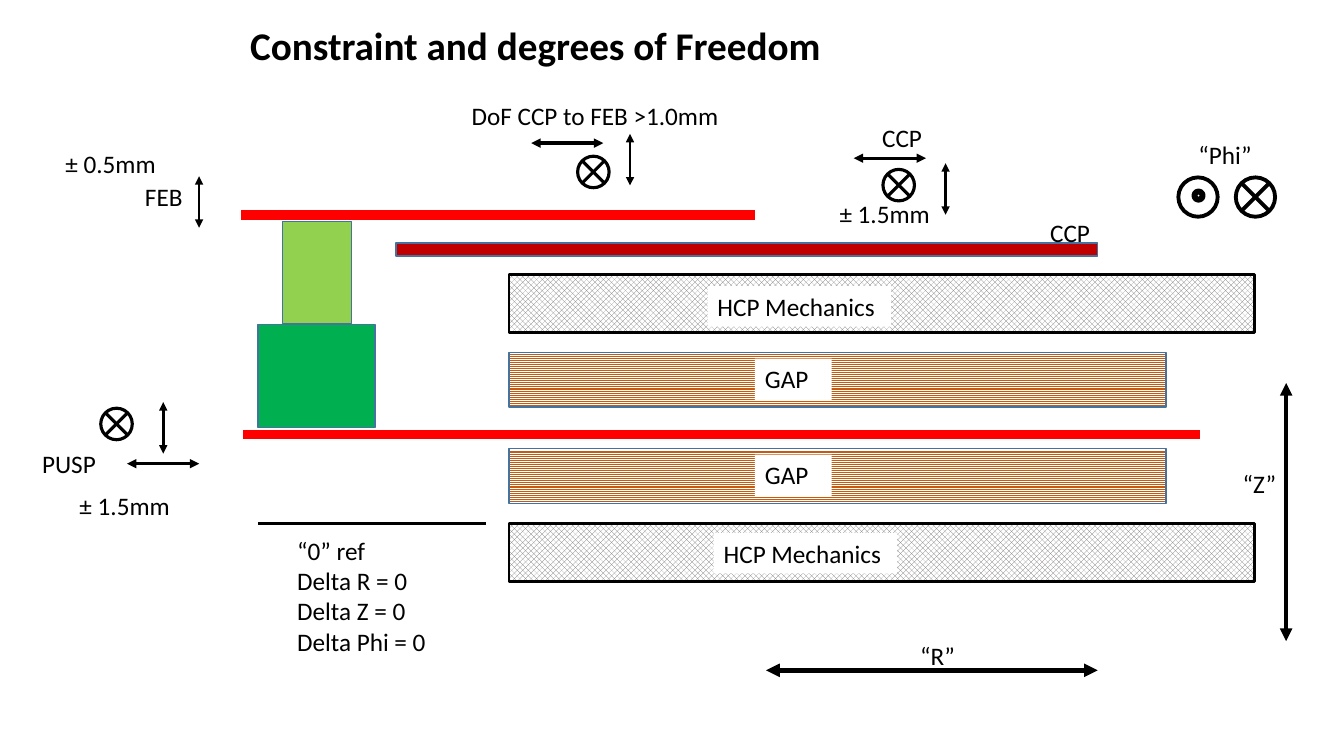
from pptx import Presentation
from pptx.dml.color import RGBColor
from pptx.enum.dml import MSO_PATTERN_TYPE as PATTERN
from pptx.enum.shapes import MSO_CONNECTOR as CONN, MSO_SHAPE as SHAPE
from pptx.enum.text import MSO_ANCHOR, MSO_AUTO_SIZE, PP_ALIGN
from pptx.oxml.ns import qn
from pptx.util import Pt
from lxml.etree import SubElement

COLORS = {
    "black": "000000", "white": "FFFFFF", "board": "FF0000", "ccp": "C00000",
    "light green": "92D050", "green": "00B050", "outline": "43739E",
    "mechanics": "767171", "gap": "C55A11",
}
BODY = {"name": "Calibri", "size": Pt(18), "bold": False}
TITLE = {"name": "Calibri", "size": Pt(28), "bold": True}
FRAME = {"word_wrap": True, "auto_size": MSO_AUTO_SIZE.NONE,
         "vertical_anchor": MSO_ANCHOR.TOP}


def rgb(name):
    return RGBColor.from_string(COLORS[name])


def set_format(obj, fmt):
    for key, value in fmt.items():
        setattr(obj, key, value)


class Diagram:
    def __init__(self, slide):
        self.slide = slide
        self.shapes = slide.shapes

    def fill_text(self, sp, lines, font):
        tf = sp.text_frame
        set_format(tf, FRAME)
        for i, line in enumerate(lines):
            p = tf.paragraphs[0] if i == 0 else tf.add_paragraph()
            p.alignment = PP_ALIGN.LEFT
            r = p.add_run()
            r.text = line
            set_format(r.font, font)
            r.font.color.rgb = rgb("black")

    def title(self, text, x, y, w, h):
        sp = self.shapes.title
        set_format(sp, {"left": Pt(x), "top": Pt(y), "width": Pt(w), "height": Pt(h)})
        self.fill_text(sp, [text], TITLE)

    def label(self, text, x, y, w, h=28.8, fill=None):
        sp = self.shapes.add_textbox(Pt(x), Pt(y), Pt(w), Pt(h))
        if fill:
            sp.fill.solid()
            sp.fill.fore_color.rgb = rgb(fill)
        self.fill_text(sp, text.split("\n"), BODY)

    def shape(self, kind, x, y, w, h, fill=None, pattern=None,
              line="outline", weight=1):
        sp = self.shapes.add_shape(kind, Pt(x), Pt(y), Pt(w), Pt(h))
        sp.shadow.inherit = False
        if pattern:
            sp.fill.patterned()
            sp.fill.pattern = pattern
            sp.fill.fore_color.rgb = rgb(fill)
            sp.fill.back_color.rgb = rgb("white")
        elif fill:
            sp.fill.solid()
            sp.fill.fore_color.rgb = rgb(fill)
        else:
            sp.fill.background()
        sp.line.color.rgb = rgb(line)
        sp.line.width = Pt(weight)

    def line(self, x1, y1, x2, y2, weight, color="black", arrows=False):
        c = self.shapes.add_connector(CONN.STRAIGHT, Pt(x1), Pt(y1), Pt(x2), Pt(y2))
        c.line.color.rgb = rgb(color)
        c.line.width = Pt(weight)
        sp_pr = c._element.spPr
        if arrows:
            ln = sp_pr.find(qn("a:ln"))
            for end in ("a:headEnd", "a:tailEnd"):
                SubElement(ln, qn(end), type="triangle")
        SubElement(sp_pr, qn("a:effectLst"))

    def arrow_across(self, x, y, length=51.6, weight=2.25):
        self.line(x, y, x + length, y, weight, arrows=True)

    def arrow_up(self, x, bottom, length=36.8, weight=2):
        self.line(x, bottom, x, bottom - length, weight, arrows=True)

    def ring(self, x, y, size=22.5, weight=2.25, kind=SHAPE.FLOWCHART_SUMMING_JUNCTION):
        self.shape(kind, x, y, size, size, line="black", weight=weight)


def main():
    prs = Presentation()
    prs.slide_width, prs.slide_height = Pt(960), Pt(540)
    s = Diagram(prs.slides.add_slide(prs.slide_layouts[5]))
    s.title("Constraint and degrees of Freedom", 171.4, 11.5, 455, 41)

    # Mechanics and gaps, with their labels
    for y, label_x, label_y in ((195.8, 505.4, 204.5), (373.7, 509.8, 380.9)):
        s.shape(SHAPE.RECTANGLE, 363.6, y, 532.8, 41.8, "mechanics",
                PATTERN.OUTLINED_DIAMOND, "black", 2)
        s.label("HCP Mechanics", label_x, label_y, 131, fill="white")
    for y in (252, 320.6):
        s.shape(SHAPE.RECTANGLE, 363.6, y, 469.4, 38.9, "gap",
                PATTERN.LIGHT_HORIZONTAL)
        s.label("GAP", 539.3, y + 4.2, 54.7, 30.2, "white")

    # Boards and connector blocks
    s.line(173.5, 310.3, 856.8, 310.3, 6, "board")
    s.line(172.1, 153.4, 539.3, 153.4, 7.25, "board")
    for x, y, w, h, fill in (
        (283, 173.5, 501.1, 9.4, "ccp"),
        (201.6, 158.4, 49.7, 72.7, "light green"),
        (184.3, 231.8, 83.5, 73.4, "green"),
    ):
        s.shape(SHAPE.RECTANGLE, x, y, w, h, fill)

    # Freedom symbols: PUSP, CCP to FEB, CCP, and FEB
    for x, bottom in ((116.6, 324), (450, 132.5), (675.4, 153.4), (142.2, 162.7)):
        s.arrow_up(x, bottom)
    for x, y in ((90.7, 331.2), (379.4, 102.2), (609.8, 113)):
        s.arrow_across(x, y)
    for x, y in ((72, 291.6), (412.6, 111.6), (630.7, 121)):
        s.ring(x, y)

    # Axes: R, Z and Phi
    s.arrow_across(547.2, 478.8, 236.9, 3.25)
    s.arrow_up(918.7, 457.9, 184.3, 3)
    s.ring(853.2, 136.8, 5.8, 4.25, SHAPE.OVAL)
    s.ring(841.7, 126.7, 28.1, 2.75, SHAPE.OVAL)
    s.ring(882.7, 126.7, 28.1, 2.75)

    # Zero reference
    s.line(184.3, 373.7, 347, 373.7, 2)
    s.label("“0” ref\nDelta R = 0\nDelta Z = 0\nDelta Phi = 0",
            205.2, 378.7, 146.9, 94.3)

    # Labels
    for text, x, y, w in (
        ("PUSP", 23, 316.8, 69.8),
        ("FEB", 96.5, 126.1, 47.5),
        ("CCP", 623, 83.5, 56.9),
        ("CCP", 743, 151.9, 56.9),
        ("± 0.5mm", 39.6, 102.2, 86.4),
        ("± 1.5mm", 49.7, 347, 86.4),
        ("± 1.5mm", 592.6, 138.2, 86.4),
        ("DoF CCP to FEB >1.0mm", 329.8, 68.4, 201.6),
        ("“R”", 650.2, 453.6, 50.4),
        ("“Z”", 880.6, 331.2, 50.4),
        ("“Phi”", 848.9, 95.8, 59.8),
    ):
        s.label(text, x, y, w)

    prs.save("out.pptx")


if __name__ == "__main__":
    main()
